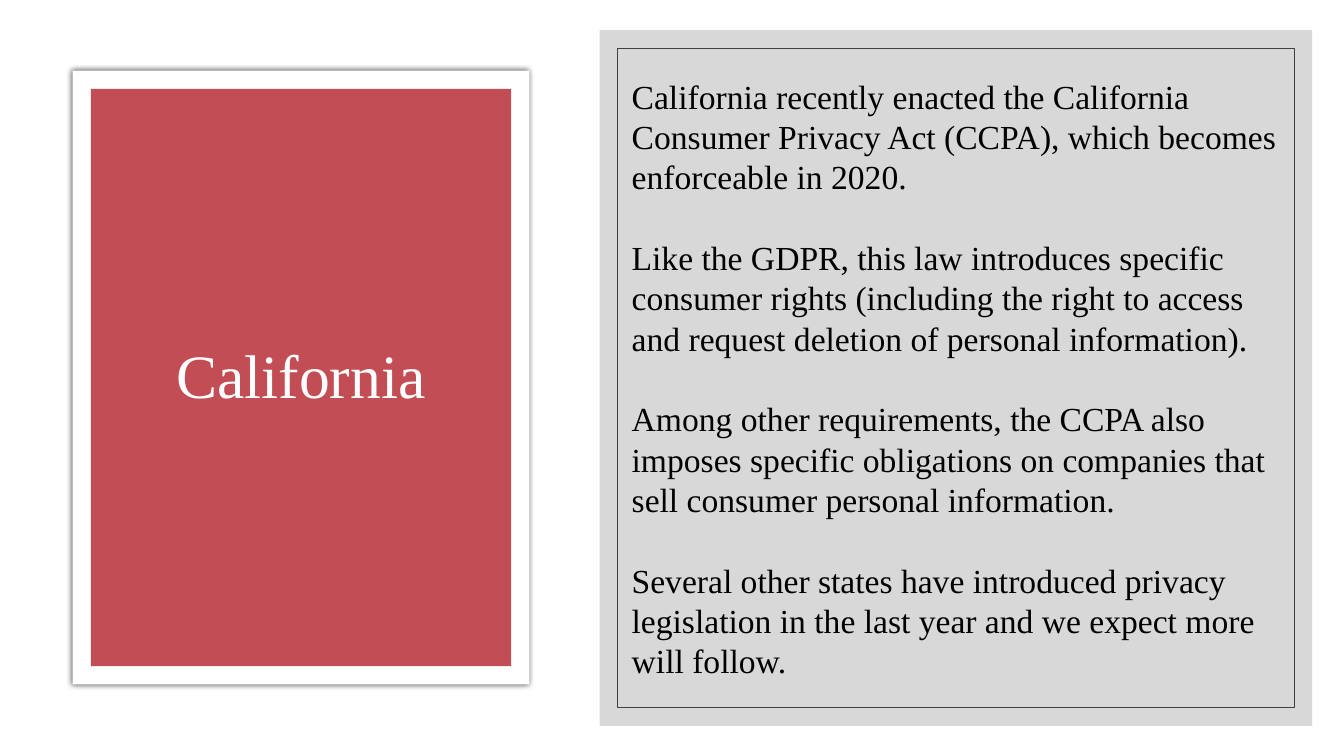
from pptx import Presentation
from pptx.dml.color import RGBColor as Rgb
from pptx.enum.shapes import MSO_SHAPE as Preset
from pptx.enum.text import MSO_ANCHOR as Anchor, MSO_AUTO_SIZE as AutoSize, PP_ALIGN as Align
from pptx.oxml import parse_xml
from pptx.oxml.ns import nsdecls, qn
from pptx.util import Cm, Pt

COLORS = {
    "white": "FFFFFF",
    "red": "C34D54",
    "gray": "BFBFBF",
    "border": "404040",
    "black": "000000",
}
FONT = "Times New Roman"
LAWS = [
    "California recently enacted the California Consumer Privacy Act (CCPA), "
    "which becomes enforceable in 2020.",
    "Like the GDPR, this law introduces specific consumer rights (including the "
    "right to access and request deletion of personal information).",
    "Among other requirements, the CCPA also imposes specific obligations on "
    "companies that sell consumer personal information.",
    "Several other states have introduced privacy legislation in the last year "
    "and we expect more will follow.",
]


def color(name):
    return Rgb.from_string(COLORS[name])


def apply(target, formats):
    for attribute, value in formats.items():
        setattr(target, attribute, value)


def add_panel(slide, box, fill=None, border=None):
    panel = slide.shapes.add_shape(Preset.RECTANGLE, *map(Cm, box))
    panel.shadow.inherit = False
    if fill:
        panel.fill.solid()
        panel.fill.fore_color.rgb = color(fill)
    else:
        panel.fill.background()
    if border:
        panel.line.color.rgb = color(border)
        panel.line.width = Pt(0.5)
    else:
        panel.line.fill.background()
    return panel


def add_glow_shadow(panel):
    effects = panel.element.spPr.find(qn("a:effectLst"))
    effects.append(parse_xml(
        f'<a:outerShdw {nsdecls("a")} blurRad="{Pt(4)}" dist="0" dir="0" algn="ctr" '
        f'rotWithShape="0"><a:srgbClr val="{COLORS["black"]}"><a:alpha val="66000"/>'
        '</a:srgbClr></a:outerShdw>'))


def make_translucent(panel, percent):
    tint = panel.element.spPr.find(qn("a:solidFill"))[0]
    tint.append(parse_xml(f'<a:alpha {nsdecls("a")} val="{percent * 1000}"/>'))


def format_paragraph(paragraph, size, ink, formats):
    apply(paragraph, formats)
    apply(paragraph.font, {"name": FONT, "size": Pt(size)})
    paragraph.font.color.rgb = color(ink)


def place_title(slide, text, box):
    title = slide.shapes.title
    apply(title, dict(zip(("left", "top", "width", "height"), map(Cm, box))))
    apply(title.text_frame, {
        "text": text,
        "word_wrap": True,
        "auto_size": AutoSize.NONE,
        "vertical_anchor": Anchor.MIDDLE,
    })
    format_paragraph(title.text_frame.paragraphs[0], 44, "white",
                     {"alignment": Align.CENTER, "line_spacing": 0.9})
    title.element.getparent().append(title.element)


def add_paragraphs(slide, texts, box):
    frame = slide.shapes.add_textbox(*map(Cm, box)).text_frame
    apply(frame, {"word_wrap": True, "auto_size": AutoSize.NONE})
    for index, text in enumerate(texts):
        paragraph = frame.add_paragraph() if index else frame.paragraphs[0]
        paragraph.text = text
        format_paragraph(paragraph, 24, "black", {
            "alignment": Align.LEFT,
            "line_spacing": Pt(28.8),
            "space_before": Pt(28.8 if index else 0),
        })


def main():
    deck = Presentation()
    apply(deck, {"slide_width": Cm(33.87), "slide_height": Cm(19.05)})
    slide = deck.slides.add_slide(deck.slide_layouts[5])
    slide.background.fill.solid()
    slide.background.fill.fore_color.rgb = color("white")

    add_glow_shadow(add_panel(slide, (1.83, 1.78, 11.51, 15.47), "white"))
    add_panel(slide, (2.29, 2.24, 10.59, 14.55), "red")
    place_title(slide, "California", (2.74, 3.3, 9.7, 12.47))

    make_translucent(add_panel(slide, (15.11, 0.76, 17.96, 17.53), "gray"), 60)
    add_panel(slide, (15.57, 1.22, 17.04, 16.61), border="border")
    add_paragraphs(slide, LAWS, (15.67, 1.78, 16.94, 16.41))

    deck.save("out.pptx")


if __name__ == "__main__":
    main()
